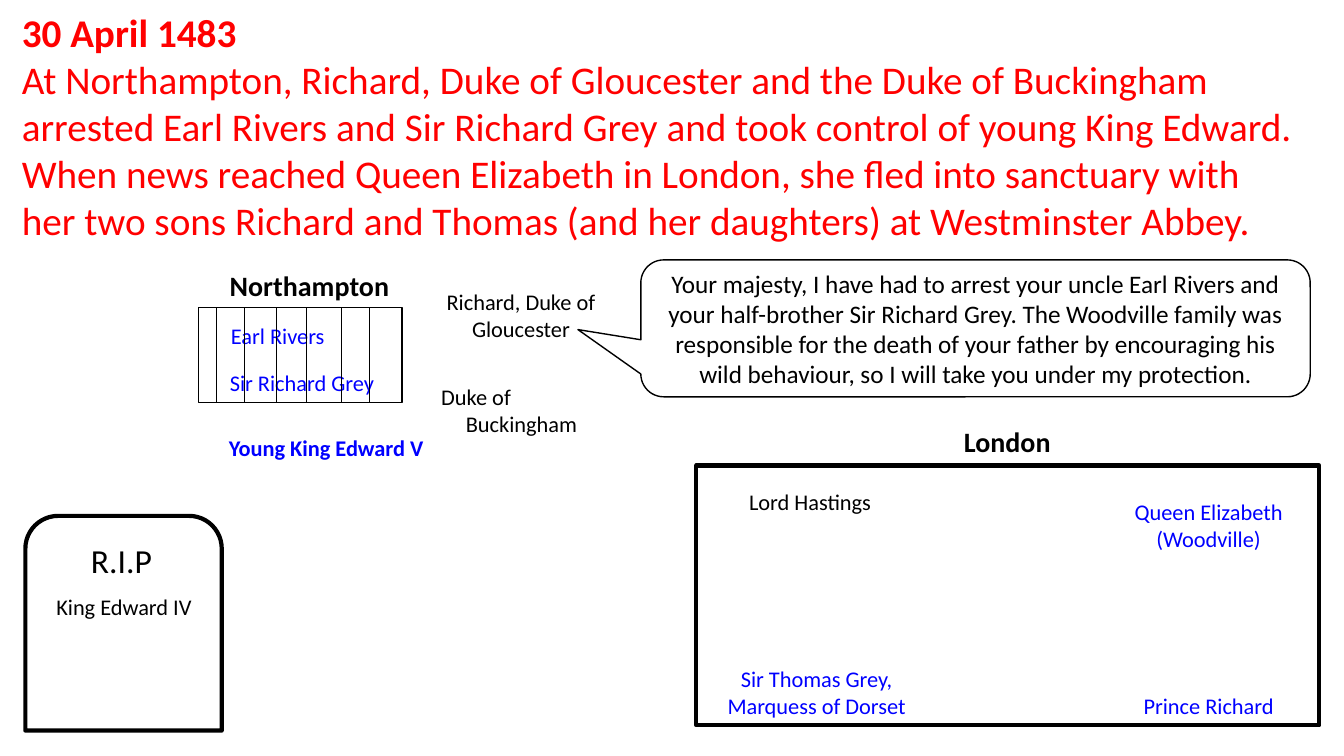
import pptx
import pptx.util
import pptx.dml.color
import pptx.enum.shapes
import pptx.enum.text
import pptx.oxml.ns
import lxml.etree

Cm, Pt = pptx.util.Cm, pptx.util.Pt
SHAPE = pptx.enum.shapes.MSO_SHAPE
ALIGN = pptx.enum.text.PP_ALIGN
ANCHOR = pptx.enum.text.MSO_ANCHOR
COLOURS = {key: pptx.dml.color.RGBColor.from_string(value) for key, value in {
    "red": "FF0000", "blue": "0000FF", "black": "000000"}.items()}

deck = pptx.Presentation()
deck.slide_width, deck.slide_height = Cm(33.87), Cm(19.05)
page = deck.slides.add_slide(deck.slide_layouts[6])


def add_words(box, lines, size, colour, align=ALIGN.CENTER):
    """Write (text, bold) lines into a box, one paragraph each."""
    frame = box.text_frame
    frame.word_wrap = True
    for number, (text, bold) in enumerate(lines):
        para = frame.paragraphs[0] if number == 0 else frame.add_paragraph()
        para.alignment = align
        span = para.add_run()
        span.text = text
        span.font.name = "Calibri"
        span.font.size = Pt(size)
        span.font.bold = bold
        span.font.color.rgb = COLOURS[colour]


def add_outline(kind, left, top, width, height, weight):
    shape = page.shapes.add_shape(kind, Cm(left), Cm(top), Cm(width), Cm(height))
    shape.shadow.inherit = False
    shape.fill.background()
    shape.line.color.rgb = COLOURS["black"]
    shape.line.width = Pt(weight)
    return shape


# Story of the day
story = page.shapes.add_textbox(Cm(0.3), Cm(0.08), Cm(32.72), Cm(6.25))
add_words(story, [
    ("30 April 1483", True),
    ("At Northampton, Richard, Duke of Gloucester and the Duke of Buckingham "
     "arrested Earl Rivers and Sir Richard Grey and took control of young King "
     "Edward. When news reached Queen Elizabeth in London, she fled into "
     "sanctuary with her two sons Richard and Thomas (and her daughters) at "
     "Westminster Abbey.", False),
], 28, "red", ALIGN.LEFT)

# Tombstone and London frame
add_outline(SHAPE.ROUND_2_SAME_RECTANGLE, 0.64, 13, 4.95, 5.41, 3)
add_outline(SHAPE.RECTANGLE, 17.55, 11.73, 15.7, 6.55, 3)

# Place names and people: text, left, top, width, height, size, colour, bold
labels = [
    ("R.I.P", 0.61, 13.49, 4.9, 1.27, 24, "black", False),
    ("King Edward IV", 0.66, 14.83, 4.93, 0.94, 16, "black", False),
    ("Queen Elizabeth (Woodville)", 27.69, 12.42, 5.54, 1.63, 16, "blue", False),
    ("Prince Richard", 27.69, 17.32, 5.54, 0.94, 16, "blue", False),
    ("Sir Thomas Grey, Marquess of Dorset", 17.81, 16.64, 5.54, 1.63, 16, "blue", False),
    ("Lord Hastings", 17.81, 12.17, 5.21, 0.94, 16, "black", False),
    ("Richard, Duke of Gloucester", 10.36, 7.14, 5.54, 1.63, 16, "black", False),
    ("Young King Edward V", 5.44, 10.82, 5.56, 0.94, 16, "blue", True),
    ("Earl Rivers", 4.22, 8, 5.56, 0.94, 16, "blue", False),
    ("Sir Richard Grey", 4.83, 9.17, 5.56, 0.94, 16, "blue", False),
    ("London", 17.55, 10.57, 15.67, 1.12, 20, "black", True),
    ("Northampton", 4.6, 6.63, 6.4, 1.12, 20, "black", True),
]
for text, left, top, width, height, size, colour, bold in labels:
    label = page.shapes.add_textbox(Cm(left), Cm(top), Cm(width), Cm(height))
    add_words(label, [(text, bold)], size, colour)

# Duke of Buckingham, with the first line set to the left
buckingham = page.shapes.add_textbox(Cm(10.36), Cm(9.53), Cm(5.56), Cm(1.63))
add_words(buckingham, [("Duke of", False), ("Buckingham", False)], 16, "black")
first_line = buckingham.text_frame.paragraphs[0]
first_line.alignment = ALIGN.LEFT
first_line._p.get_or_add_pPr().set("indent", str(Cm(0.51)))

# Richard's speech
speech = add_outline(SHAPE.ROUNDED_RECTANGULAR_CALLOUT, 16.15, 6.55, 16.87, 3.45, 1)
for number, value in enumerate((-0.594, 0.009, 0.167)):
    speech.adjustments[number] = value
speech.text_frame.vertical_anchor = ANCHOR.MIDDLE
add_words(speech, [(
    "Your majesty, I have had to arrest your uncle Earl Rivers and your "
    "half-brother Sir Richard Grey. The Woodville family was responsible for "
    "the death of your father by encouraging his wild behaviour, so I will take "
    "you under my protection.", False)], 18, "black")

# Prison cell with its bars
cell_top, cell_height = 7.75, 2.39
add_outline(SHAPE.RECTANGLE, 5, cell_top, 5.13, cell_height, 1)
for x in (5.44, 6.17, 6.96, 7.72, 8.59, 9.3):
    bar = page.shapes.add_connector(
        pptx.enum.shapes.MSO_CONNECTOR.STRAIGHT,
        Cm(x), Cm(cell_top), Cm(x), Cm(cell_top + cell_height))
    bar.line.color.rgb = COLOURS["black"]
    bar.line.width = Pt(0.5)
    lxml.etree.SubElement(bar._element.spPr, pptx.oxml.ns.qn("a:effectLst"))

deck.save("out.pptx")
